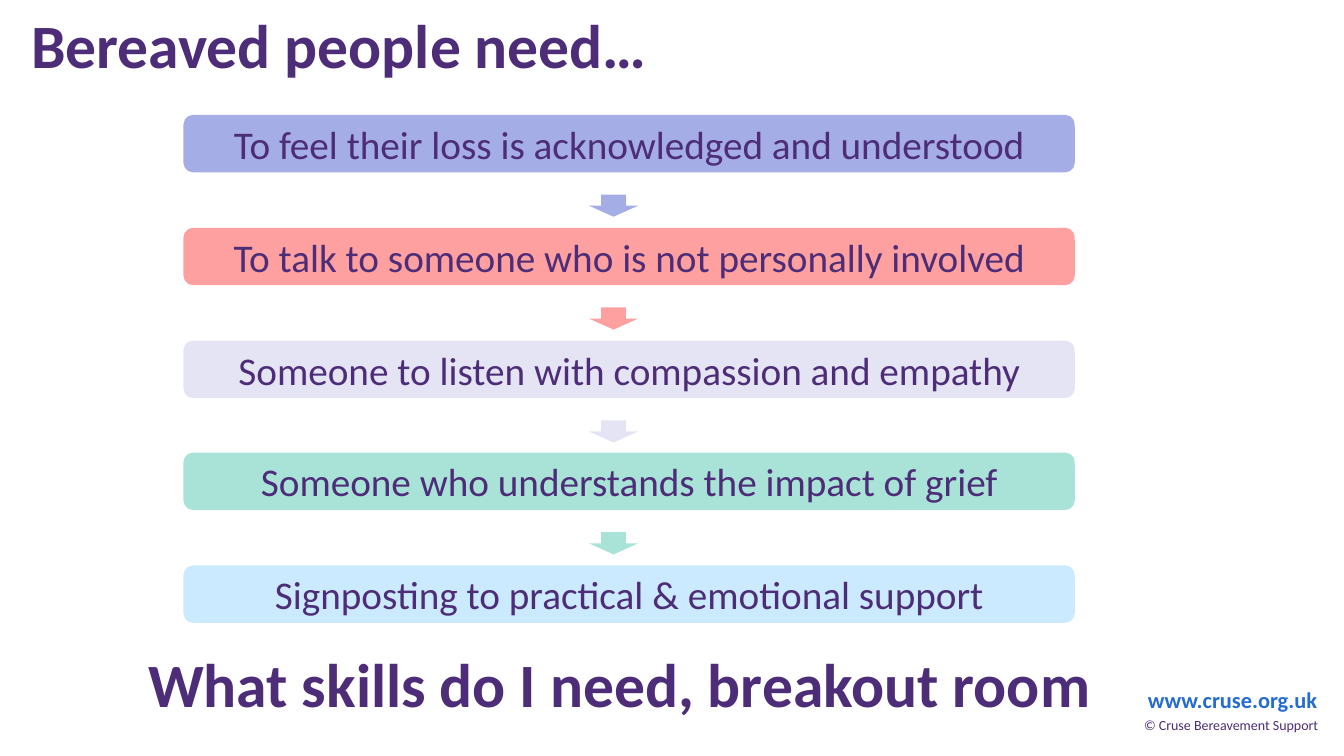
from pptx import Presentation
from pptx import util as u
from pptx.dml.color import RGBColor
from pptx.enum import shapes, text

PX = u.Inches(0.01)
FONT = "Calibri"
PURPLE = RGBColor(0x4D, 0x2D, 0x78)
LINK_BLUE = RGBColor(0x25, 0x6C, 0xD0)
PERIWINKLE = RGBColor(0xA5, 0xAD, 0xE6)
CORAL = RGBColor(0xFF, 0xA0, 0xA0)
LAVENDER = RGBColor(0xE4, 0xE4, 0xF4)
MINT = RGBColor(0xA9, 0xE2, 0xD6)
SKY = RGBColor(0xCC, 0xEA, 0xFF)

NEEDS = [
    ("To feel their loss is acknowledged and understood", PERIWINKLE),
    ("To talk to someone who is not personally involved", CORAL),
    ("Someone to listen with compassion and empathy", LAVENDER),
    ("Someone who understands the impact of grief", MINT),
    ("Signposting to practical & emotional support", SKY),
]
FIRST_TOP, LAST_TOP = 114, 561
ARROW_DROP = 79


def write(frame, wording, size=28, color=PURPLE, bold=False, centered=False,
          middle=False, wrap=True, spacing=None):
    frame.word_wrap = wrap
    frame.vertical_anchor = text.MSO_ANCHOR.MIDDLE if middle else text.MSO_ANCHOR.TOP
    paragraph = frame.paragraphs[0]
    paragraph.alignment = text.PP_ALIGN.CENTER if centered else text.PP_ALIGN.LEFT
    paragraph.line_spacing = spacing
    run = paragraph.add_run()
    run.text = wording
    run.font.name = FONT
    run.font.size = u.Pt(size)
    run.font.bold = bold
    run.font.color.rgb = color


class SlideBuilder:
    def __init__(self, slide):
        self.slide = slide

    def label(self, wording, box, **style):
        area = self.slide.shapes.add_textbox(*(side * PX for side in box))
        write(area.text_frame, wording, **style)

    def block(self, holder, preset, box, fill):
        """Add a flat, borderless preset shape to the given group."""
        shape = holder.shapes.add_shape(preset, *(side * PX for side in box))
        shape.shadow.inherit = False
        shape.fill.solid()
        shape.fill.fore_color.rgb = fill
        shape.line.fill.background()
        return shape

    def need(self, wording, fill, top, leads_on):
        """Add one bar, grouped with a down arrow if another need follows."""
        holder = self.slide.shapes.add_group_shape() if leads_on else self.slide
        bar = self.block(holder, shapes.MSO_SHAPE.ROUNDED_RECTANGLE,
                         (182, top, 884, 57), fill)
        write(bar.text_frame, wording, centered=True, middle=True)
        if leads_on:
            self.block(holder, shapes.MSO_SHAPE.DOWN_ARROW,
                       (584, top + ARROW_DROP, 49, 22), fill)


def main():
    deck = Presentation()
    deck.slide_width = 1333 * PX
    deck.slide_height = 750 * PX
    builder = SlideBuilder(deck.slides.add_slide(deck.slide_layouts[6]))

    builder.label("Bereaved people need…", (21, -24, 974, 145),
                  size=44, bold=True, middle=True, spacing=0.9)
    last = len(NEEDS) - 1
    for index, (wording, fill) in enumerate(NEEDS):
        top = round(FIRST_TOP + index * (LAST_TOP - FIRST_TOP) / last)
        builder.need(wording, fill, top, leads_on=index < last)
    builder.label("What skills do I need, breakout room", (137, 636, 974, 84),
                  size=44, bold=True)
    builder.label("www.cruse.org.uk", (1126, 676, 193, 37),
                  size=16, color=LINK_BLUE, bold=True, centered=True, wrap=False)
    builder.label("© Cruse Bereavement Support", (1120, 706, 202, 44),
                  size=10, centered=True, wrap=False)
    deck.save("out.pptx")


if __name__ == "__main__":
    main()
